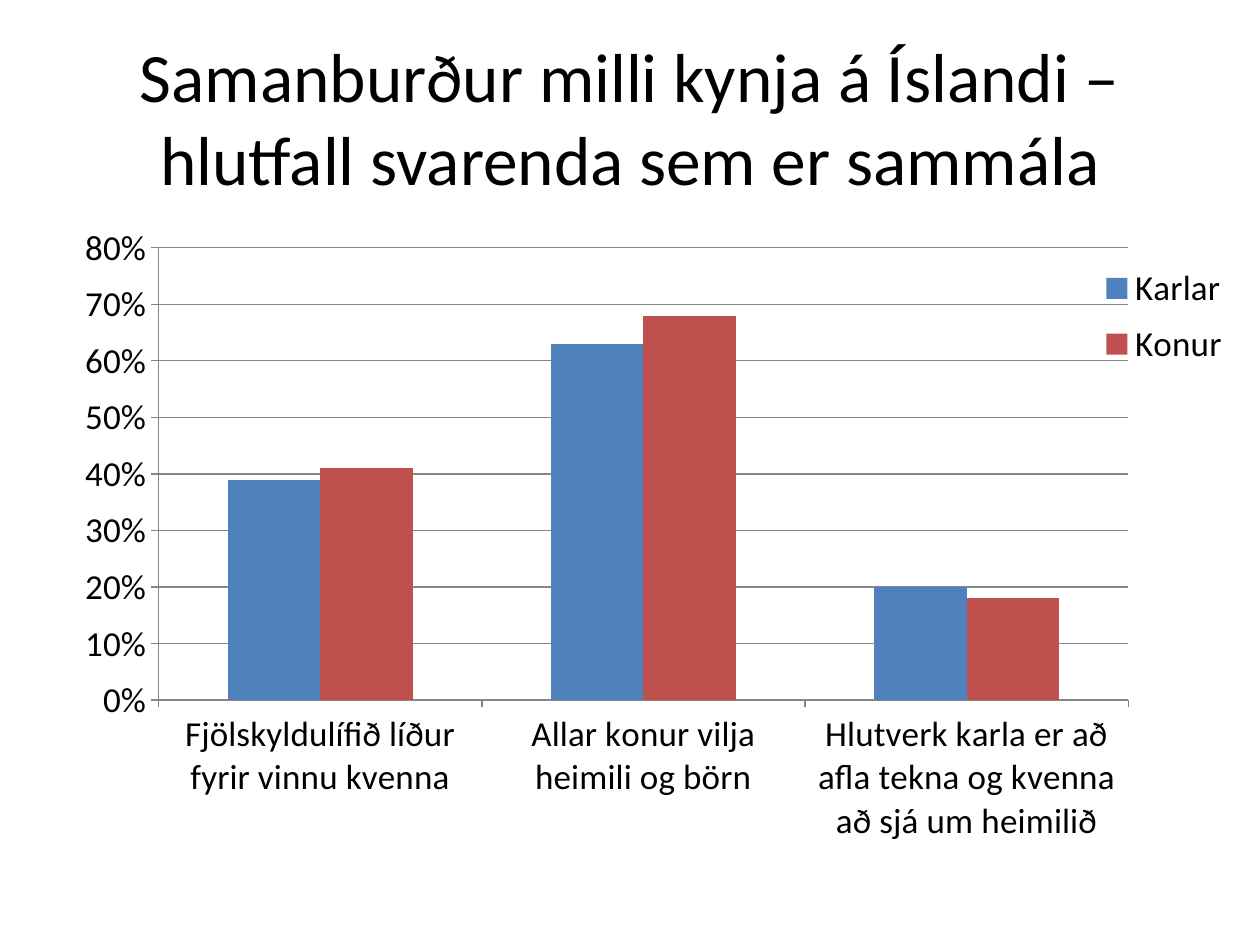
from lxml.etree import SubElement
from pptx import Presentation
from pptx.chart.data import CategoryChartData
from pptx.dml.color import RGBColor
from pptx.enum.chart import XL_CHART_TYPE, XL_LEGEND_POSITION, XL_TICK_MARK
from pptx.enum.text import MSO_ANCHOR, PP_ALIGN
from pptx.oxml.ns import qn
from pptx.util import Inches, Pt

BLACK = RGBColor(0x00, 0x00, 0x00)
GRAY = RGBColor(0x86, 0x86, 0x86)
BLUE = RGBColor(0x4F, 0x81, 0xBD)
RED = RGBColor(0xC0, 0x50, 0x4D)

TITLE = "Samanburður milli kynja á Íslandi – hlutfall svarenda sem er sammála"
STATEMENTS = [
    "Fjölskyldulífið líður fyrir vinnu kvenna",
    "Allar konur vilja heimili og börn",
    "Hlutverk karla er að afla tekna og kvenna að sjá um heimilið",
]
GENDERS = [
    ("Karlar", (0.39, 0.63, 0.20), BLUE),
    ("Konur", (0.41, 0.68, 0.18), RED),
]
TITLE_BOX = (0.5, 0.3, 9, 1.25)
CHART_BOX = (0.31, 1.64, 9.5, 5.44)
PLOT_AREA = {"layoutTarget": "inner", "xMode": "edge", "yMode": "edge",
             "x": 0.1, "y": 0.06, "w": 0.81, "h": 0.66}
LEGEND_AREA = {"xMode": "edge", "yMode": "edge",
               "x": 0.88, "y": 0.07, "w": 0.12, "h": 0.18}
TITLE_FONT = {"name": "Calibri", "size": Pt(39.6), "bold": False}
CHART_FONT = {"name": "Calibri", "size": Pt(20), "bold": False}
VALUE_SCALE = {"minimum_scale": 0, "maximum_scale": 0.8, "major_unit": 0.1,
               "has_major_gridlines": True}


def apply_format(target, values):
    for attribute, value in values.items():
        setattr(target, attribute, value)


def format_font(font, values):
    apply_format(font, values)
    font.color.rgb = BLACK


def set_layout(parent, index, area):
    for previous in parent.findall(qn("c:layout")):
        parent.remove(previous)
    layout = SubElement(parent, qn("c:layout"))
    manual = SubElement(layout, qn("c:manualLayout"))
    for tag, value in area.items():
        SubElement(manual, qn(f"c:{tag}")).set("val", str(value))
    parent.insert(index, layout)


def add_title(slide):
    title = slide.shapes.title
    title.left, title.top, title.width, title.height = map(Inches, TITLE_BOX)
    title.text_frame.text = TITLE
    apply_format(title.text_frame, {"word_wrap": True,
                                    "vertical_anchor": MSO_ANCHOR.MIDDLE})
    heading = title.text_frame.paragraphs[0]
    heading.alignment = PP_ALIGN.CENTER
    format_font(heading.runs[0].font, TITLE_FONT)


def add_comparison(slide):
    data = CategoryChartData(number_format="0%")
    data.categories = STATEMENTS
    for gender, shares, _ in GENDERS:
        data.add_series(gender, shares)
    chart = slide.shapes.add_chart(
        XL_CHART_TYPE.COLUMN_CLUSTERED, *map(Inches, CHART_BOX), data).chart
    apply_format(chart, {"has_title": False, "has_legend": True})
    format_font(chart.font, CHART_FONT)

    bars = chart.plots[0]
    apply_format(bars, {"gap_width": 150, "overlap": 0,
                        "vary_by_categories": False})
    for series, (_, _, color) in zip(bars.series, GENDERS):
        series.format.fill.solid()
        series.format.fill.fore_color.rgb = color

    share_axis = chart.value_axis
    apply_format(share_axis, VALUE_SCALE)
    apply_format(share_axis.tick_labels, {"number_format": "0%",
                                          "number_format_is_linked": False})
    for axis in (chart.category_axis, share_axis):
        axis.major_tick_mark = XL_TICK_MARK.OUTSIDE
        format_font(axis.tick_labels.font, CHART_FONT)
    for lined in (chart.category_axis, share_axis, share_axis.major_gridlines):
        lined.format.line.color.rgb = GRAY
        lined.format.line.width = Pt(0.75)

    legend = chart.legend
    apply_format(legend, {"position": XL_LEGEND_POSITION.RIGHT,
                          "include_in_layout": False})
    format_font(legend.font, CHART_FONT)
    chart_root = chart.element
    set_layout(chart_root.find(".//" + qn("c:plotArea")), 0, PLOT_AREA)
    set_layout(chart_root.find(".//" + qn("c:legend")), 1, LEGEND_AREA)


def main():
    deck = Presentation()
    deck.slide_width, deck.slide_height = Inches(10), Inches(7.5)
    slide = deck.slides.add_slide(deck.slide_layouts[5])
    add_title(slide)
    add_comparison(slide)
    deck.save("out.pptx")


if __name__ == "__main__":
    main()
